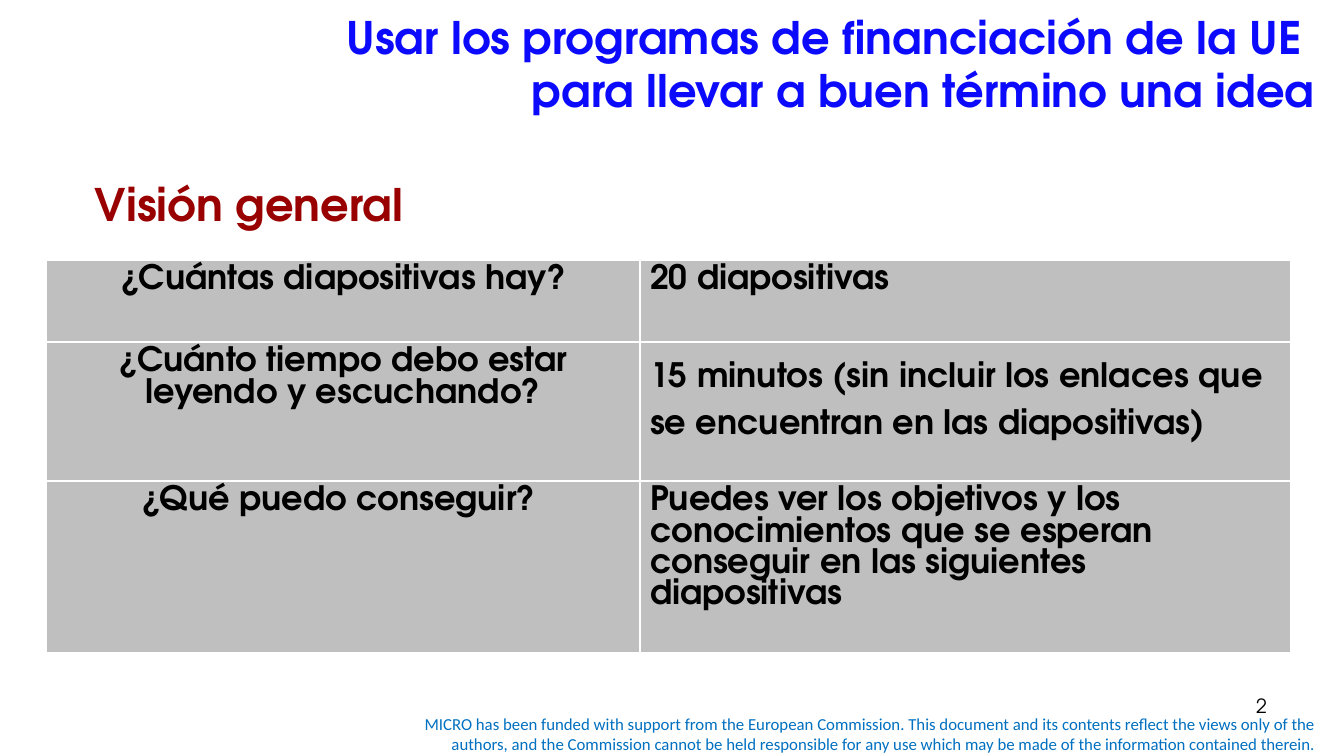
from lxml import etree
from pptx import Presentation
from pptx.dml.color import RGBColor
from pptx.enum.text import MSO_ANCHOR, PP_ALIGN
from pptx.oxml.ns import qn
from pptx.util import Pt

LEFT, MID, RIGHT = PP_ALIGN.LEFT, PP_ALIGN.CENTER, PP_ALIGN.RIGHT
TOP, CENTRE = MSO_ANCHOR.TOP, MSO_ANCHOR.MIDDLE
PX = 914400 / 100.8
FONT = "TeX Gyre Adventor"
HUE = {"title": "0B0AFD", "head": "990000", "note": "0070C0",
       "text": "000000", "cell": "BFBFBF", "rule": "FFFFFF"}


def px(*sizes):
    return [round(size * PX) for size in sizes]


def write(frame, text, size, hue, align=LEFT, bold=False, font=FONT):
    frame.word_wrap = True
    par = frame.paragraphs[0]
    par.text = text
    par.alignment = align
    par.font.size = Pt(size)
    par.font.bold = bold
    par.font.name = font
    par.font.color.rgb = RGBColor.from_string(HUE[hue])
    return par


deck = Presentation()
deck.slide_width, deck.slide_height = px(1344, 756)
slide = deck.slides.add_slide(deck.slide_layouts[6])

# Title, heading, page number and funding note
title = "Usar los programas de financiación de la UE \vpara llevar a buen término una idea"
note = ("MICRO has been funded with support from the European Commission. "
        "This document and its contents reflect the views only of the authors, "
        "and the Commission cannot be held responsible for any use which may be "
        "made of the information contained therein.")
texts = [
    ((378, 709, 948, 50), CENTRE, (note, 12, "note", RIGHT, False, "Calibri")),
    ((115, 0, 1210, 126), CENTRE, (title, 32, "title", RIGHT, True)),
    ((964, 689, 313, 52), TOP, ("2", 14, "text", RIGHT)),
    ((85, 172, 457, 65), TOP, ("Visión general", 32, "head", LEFT, True)),
]
for place, anchor, words in texts:
    frame = slide.shapes.add_textbox(*px(*place)).text_frame
    frame.vertical_anchor = anchor
    write(frame, *words)

# Overview table
rows = [
    (82, "¿Cuántas diapositivas hay?", "20 diapositivas"),
    (139, "¿Cuánto tiempo debo estar leyendo y escuchando?",
     "15 minutos (sin incluir los enlaces que se encuentran en las diapositivas)"),
    (151, "¿Qué puedo conseguir? ",
     "Puedes ver los objetivos y los conocimientos que se esperan "
     "conseguir en las siguientes diapositivas"),
]
widths = px(594, 651)
table = slide.shapes.add_table(3, 2, *px(46, 260, 1245, 372)).table
for col, width in zip(table.columns, widths):
    col.width = width
for r, (high, *pair) in enumerate(rows):
    table.rows[r].height = px(high)[0]
    for c, text in enumerate(pair):
        cell = table.cell(r, c)
        par = write(cell.text_frame, text, 24, "text", (MID, LEFT)[c], True)
        if (r, c) == (1, 1):
            par.line_spacing = 1.5
        # Borders come before the fill
        props = cell._tc.get_or_add_tcPr()
        for side in ("lnL", "lnR", "lnT", "lnB"):
            line = etree.SubElement(props, qn("a:" + side), w=str(Pt(1)))
            paint = etree.SubElement(line, qn("a:solidFill"))
            etree.SubElement(paint, qn("a:srgbClr"), val=HUE["rule"])
        cell.fill.solid()
        cell.fill.fore_color.rgb = RGBColor.from_string(HUE["cell"])

deck.save("out.pptx")
